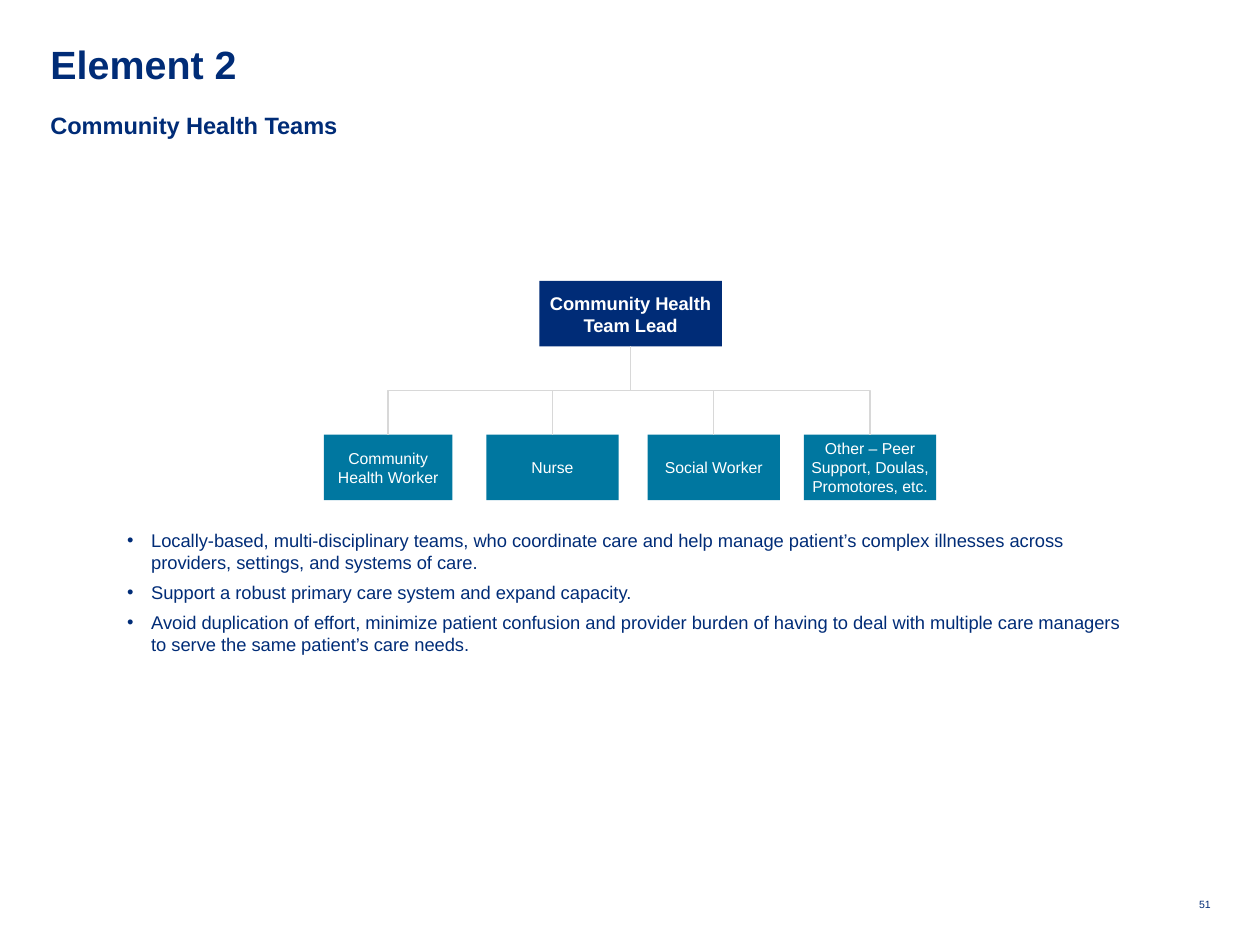
import dataclasses

import lxml.etree
import pptx
import pptx.dml.color
import pptx.enum.shapes
import pptx.enum.text
import pptx.oxml.ns
import pptx.util

Inches = pptx.util.Inches
Pt = pptx.util.Pt
Align = pptx.enum.text.PP_ALIGN
Anchor = pptx.enum.text.MSO_ANCHOR


@dataclasses.dataclass(frozen=True)
class Theme:
    """Colours and type sizes of the page."""
    font: str = "Arial"
    navy: str = "002C77"
    teal: str = "0077A0"
    white: str = "FFFFFF"
    rule: str = "D8D8D8"
    title: float = 22.5
    subtitle: float = 13.5
    body: float = 10.5
    role: float = 9
    number: float = 6


def rgb(value):
    """Return a colour object for a hex value."""
    return pptx.dml.color.RGBColor.from_string(value)


def add_child(parent, tag, **attributes):
    """Append a drawing element with its attributes."""
    return lxml.etree.SubElement(parent, pptx.oxml.ns.qn(tag), attributes)


def apply(target, values):
    """Set each attribute named in a dict of format values."""
    for name, value in values.items():
        setattr(target, name, value)


class PageBuilder:
    """Hold the theme and the current page, and draw elements on it."""

    def __init__(self, deck, theme):
        """Start a title-only page."""
        self.theme = theme
        self.page = deck.slides.add_slide(deck.slide_layouts[5])

    def fill_text(self, box, lines, size, color, bold=False, bullet=False,
                  inset=0, anchor=Anchor.TOP, **layout):
        """Fill a box with formatted paragraphs."""
        frame = box.text_frame
        apply(frame, {"word_wrap": True, "auto_size": pptx.enum.text.MSO_AUTO_SIZE.NONE,
                      "vertical_anchor": anchor, "margin_left": 0, "margin_right": 0,
                      "margin_top": Inches(inset), "margin_bottom": Inches(inset)})
        for index, line in enumerate(lines):
            para = frame.add_paragraph() if index else frame.paragraphs[0]
            apply(para, {"alignment": Align.LEFT, "space_before": Pt(0), **layout})
            if bullet:
                properties = para._p.get_or_add_pPr()
                properties.set("marL", str(Inches(0.19)))
                properties.set("indent", str(-Inches(0.19)))
                add_child(properties, "a:buFont", typeface=self.theme.font)
                add_child(properties, "a:buChar", char="•")
            span = para.add_run()
            span.text = line
            apply(span.font, {"name": self.theme.font, "size": Pt(size), "bold": bold})
            span.font.color.rgb = rgb(color)

    def title(self, text, left, top, width, height):
        """Place and format the title placeholder."""
        box = self.page.shapes.title
        apply(box, {"left": Inches(left), "top": Inches(top),
                    "width": Inches(width), "height": Inches(height)})
        self.fill_text(box, [text], self.theme.title, self.theme.navy,
                       bold=True, line_spacing=0.8)

    def text(self, lines, left, top, width, height, size, **layout):
        """Add a navy text box."""
        box = self.page.shapes.add_textbox(*map(Inches, (left, top, width, height)))
        self.fill_text(box, lines, size, self.theme.navy, **layout)

    def role(self, text, left, top, width, height, fill, size, bold=False):
        """Add a filled box of the team chart."""
        box = self.page.shapes.add_shape(
            pptx.enum.shapes.MSO_SHAPE.RECTANGLE, *map(Inches, (left, top, width, height)))
        box.shadow.inherit = False
        box.fill.solid()
        box.fill.fore_color.rgb = rgb(fill)
        box.line.fill.background()
        self.fill_text(box, [text], size, self.theme.white, bold=bold, inset=0.05,
                       anchor=Anchor.MIDDLE, alignment=Align.CENTER)
        return box

    def branch(self, parent, child):
        """Join a parent box to a child box with a vertical elbow."""
        start_x, start_y = parent.left + parent.width // 2, parent.top + parent.height
        end_x, end_y = child.left + child.width // 2, child.top
        link = self.page.shapes.add_connector(
            pptx.enum.shapes.MSO_CONNECTOR.ELBOW, start_x, start_y, end_x, end_y)
        link.begin_connect(parent, 2)
        link.end_connect(child, 0)
        drop, reach = end_y - start_y, abs(end_x - start_x)
        apply(link, {"left": (start_x + end_x - drop) // 2,
                     "top": (start_y + end_y - reach) // 2,
                     "width": drop, "height": reach})
        rightward = end_x > start_x
        frame = link._element.spPr.find(pptx.oxml.ns.qn("a:xfrm"))
        frame.set("rot", str((270 if rightward else 90) * 60000))
        frame.set("flipH", "1" if rightward else "0")
        frame.set("flipV", "0")
        link.line.color.rgb = rgb(self.theme.rule)
        link.line.width = Pt(0.75)
        add_child(link._element.spPr, "a:effectLst")


def main():
    """Build the page and save the deck."""
    deck = pptx.Presentation()
    apply(deck, {"slide_width": Inches(10), "slide_height": Inches(7.5)})
    theme = Theme()
    builder = PageBuilder(deck, theme)

    builder.title("Element 2", 0.4, 0.39, 9.21, 0.54)
    builder.text(["Community Health Teams"], 0.4, 0.88, 9.21, 0.35, theme.subtitle,
                 bold=True, space_after=Pt(4.5))
    builder.text(["51"], 9.38, 7.13, 0.23, 0.1, theme.number, alignment=Align.RIGHT)

    lead = builder.role("Community Health Team Lead", 4.28, 2.23, 1.45, 0.52,
                        theme.navy, theme.body, bold=True)
    roles = [
        ("Community Health Worker", 2.57, 1.02),
        ("Nurse", 3.86, 1.05),
        ("Social Worker", 5.14, 1.05),
        ("Other – Peer Support, Doulas, Promotores, etc.", 6.38, 1.05),
    ]
    for name, left, width in roles:
        member = builder.role(name, left, 3.45, width, 0.52, theme.teal, theme.role)
        builder.branch(lead, member)

    builder.text([
        "Locally-based, multi‑disciplinary teams, who coordinate care and help manage "
        "patient’s complex illnesses across providers, settings, and systems of care.",
        "Support a robust primary care system and expand capacity.",
        "Avoid duplication of effort, minimize patient confusion and provider burden of "
        "having to deal with multiple care managers to serve the same patient’s care needs.",
    ], 1.01, 4.2, 7.98, 1.53, theme.body, bullet=True, space_after=Pt(4.5))

    deck.save("out.pptx")


if __name__ == "__main__":
    main()
